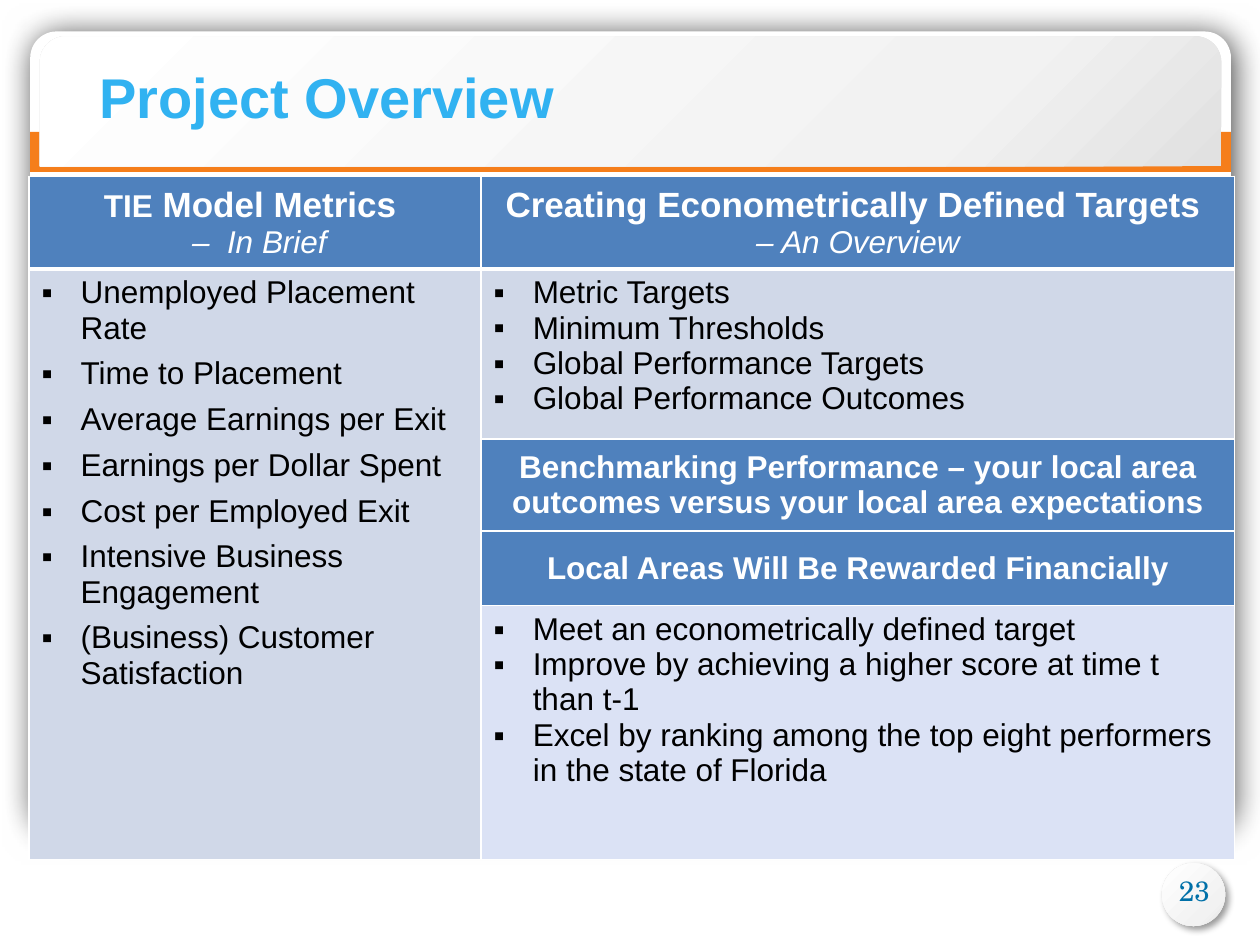
from collections import namedtuple

from lxml import etree
from pptx import Presentation
from pptx import util as u
from pptx.dml.color import RGBColor
from pptx.enum import shapes, text
from pptx.oxml import ns

WHITE = RGBColor(0xFF, 0xFF, 0xFF)
BLACK = RGBColor(0, 0, 0)
ORANGE = RGBColor(0xF5, 0x7E, 0x1B)
SKY = RGBColor(0x31, 0xB2, 0xF1)
NUMBER_BLUE = RGBColor(0, 0x70, 0xA8)
HEADER_BLUE = RGBColor(0x4F, 0x81, 0xBD)
PALE_BLUE = RGBColor(0xD0, 0xD8, 0xE8)
LIGHT_BLUE = RGBColor(0xDB, 0xE2, 0xF5)
SILVER = ((0, RGBColor(0xE1, 0xE1, 0xE1)), (24, RGBColor(0xF2, 0xF2, 0xF2)), (99, WHITE))

SHAPE = shapes.MSO_SHAPE
CENTER = text.PP_ALIGN.CENTER
MIDDLE = text.MSO_ANCHOR.MIDDLE
METRICS = ("Unemployed Placement Rate", "Time to Placement", "Average Earnings per Exit",
           "Earnings per Dollar Spent", "Cost per Employed Exit",
           "Intensive Business Engagement", "(Business) Customer Satisfaction")
TARGETS = ("Metric Targets", "Minimum Thresholds", "Global Performance Targets",
           "Global Performance Outcomes")
REWARDS = ("Meet an econometrically defined target",
           "Improve by achieving a higher score at time t than t-1",
           "Excel by ranking among the top eight performers in the state of Florida")

Run = namedtuple("Run", "words size bold italic", defaults=(18, False, False))


class Box(namedtuple("Box", "left top width height")):
    """A rectangle in inches."""

    def inner(self, left, top, width, height):
        """Return the inner box at the given shares of its size."""
        return Box(self.left + left * self.width, self.top + top * self.height,
                   width * self.width, height * self.height)

    def lengths(self):
        """Return the four sides as slide lengths."""
        return [u.Inches(side) for side in self]


def add_node(parent, tag, **attributes):
    """Append a DrawingML element and return it."""
    return etree.SubElement(parent, ns.qn(tag), {k: str(v) for k, v in attributes.items()})


def add_panel(slide, box, kind, fill, adjustments=(), shadow=None):
    """Draw a borderless panel with a plain or silver fill."""
    panel = slide.shapes.add_shape(kind, *box.lengths())
    for index, value in enumerate(adjustments):
        panel.adjustments[index] = value
    panel.line.fill.background()
    panel.shadow.inherit = False
    if fill is SILVER:
        panel.fill.gradient()
        gradient = panel.element.spPr.find(ns.qn("a:gradFill"))
        for child in list(gradient):
            gradient.remove(child)
        stops = add_node(gradient, "a:gsLst")
        for position, color in fill:
            stop = add_node(stops, "a:gs", pos=position * 1000)
            add_node(stop, "a:srgbClr", val=color)
        add_node(gradient, "a:lin", ang=225 * 60000, scaled=0)
    else:
        panel.fill.solid()
        panel.fill.fore_color.rgb = fill
    if shadow:
        opacity, blur = shadow
        effects = panel.element.spPr.find(ns.qn("a:effectLst"))
        outer = add_node(effects, "a:outerShdw", blurRad=u.Pt(blur), dist=u.Pt(3),
                         dir=45 * 60000, algn="tl", rotWithShape=0)
        color = add_node(outer, "a:srgbClr", val=BLACK)
        add_node(color, "a:alpha", val=opacity * 1000)


def add_run(paragraph, run, color, font="Arial"):
    """Add one formatted run."""
    piece = paragraph.add_run()
    piece.text = run.words
    piece.font.name = font
    piece.font.size = u.Pt(run.size)
    piece.font.bold, piece.font.italic = run.bold, run.italic
    piece.font.color.rgb = color


def add_label(slide, box, run, color, font="Arial"):
    """Add a one-line text box and return its frame."""
    frame = slide.shapes.add_textbox(*box.lengths()).text_frame
    frame.word_wrap = True
    add_run(frame.paragraphs[0], run, color, font)
    return frame


def draw_card(slide, box):
    """Draw the shadowed card with its orange band and silver header."""
    add_panel(slide, box, SHAPE.ROUNDED_RECTANGLE, WHITE, (0.033,), (72, 18))
    add_panel(slide, box.inner(0, 0.126, 1, 0.05), SHAPE.RECTANGLE, ORANGE)
    add_panel(slide, box.inner(0.008, 0.006, 0.984, 0.163),
              SHAPE.ROUND_2_SAME_RECTANGLE, SILVER, (0.2, 0))


def draw_title(slide, box):
    """Write the slide title."""
    frame = add_label(slide, box, Run("Project Overview", 32, True), SKY)
    frame.auto_size = text.MSO_AUTO_SIZE.SHAPE_TO_FIT_TEXT
    frame.paragraphs[0].line_spacing = 0.9


def draw_page_number(slide, box):
    """Draw the round badge with the page number."""
    add_panel(slide, box.inner(0.15, 0, 0.68, 1), SHAPE.ROUNDED_RECTANGLE, SILVER,
              (0.5,), (40, 4))
    frame = add_label(slide, box.inner(0, 0.16, 1, 0.66), Run("23", 16),
                      NUMBER_BLUE, "TeX Gyre Schola")
    frame.margin_top = 0
    frame.paragraphs[0].alignment = CENTER


def set_cell(cell, fill, bottom=1):
    """Give a cell white borders and a plain fill."""
    properties = cell._tc.get_or_add_tcPr()
    for tag, width in (("a:lnL", 1), ("a:lnR", 1), ("a:lnT", 1), ("a:lnB", bottom)):
        line = add_node(properties, tag, w=u.Pt(width))
        add_node(add_node(line, "a:solidFill"), "a:srgbClr", val=WHITE)
    cell.fill.solid()
    cell.fill.fore_color.rgb = fill


def next_paragraph(frame, index):
    """Return the first paragraph of a frame or a new one."""
    return frame.add_paragraph() if index else frame.paragraphs[0]


def write_heading(cell, *lines):
    """Write centred white lines, each a sequence of runs."""
    cell.vertical_anchor = MIDDLE
    for index, line in enumerate(lines):
        paragraph = next_paragraph(cell.text_frame, index)
        paragraph.alignment = CENTER
        for run in line:
            add_run(paragraph, run, WHITE)


def write_bullets(cell, items, space_after=0):
    """Write a list with square bullets."""
    for index, item in enumerate(items):
        paragraph = next_paragraph(cell.text_frame, index)
        properties = paragraph._p.get_or_add_pPr()
        properties.set("marL", str(u.Inches(0.31)))
        properties.set("indent", str(u.Inches(-0.31)))
        add_node(properties, "a:buFont", typeface="Arial")
        add_node(properties, "a:buChar", char="▪")
        paragraph.space_after = u.Pt(space_after)
        add_run(paragraph, Run(item), BLACK)


def draw_overview_table(slide, box):
    """Draw the metrics column beside the targets and rewards column."""
    column_shares = (0.375, 0.625)
    row_shares = (0.135, 0.249, 0.135, 0.109, 0.372)
    table = slide.shapes.add_table(5, 2, *box.lengths()).table
    for column, share in zip(table.columns, column_shares):
        column.width = u.Inches(box.width * share)
    for row, share in zip(table.rows, row_shares):
        row.height = u.Inches(box.height * share)
    right_fills = (HEADER_BLUE, PALE_BLUE, HEADER_BLUE, HEADER_BLUE, LIGHT_BLUE)
    for row, fill in enumerate(right_fills):
        bottom = 1 if row else 3
        set_cell(table.cell(row, 0), PALE_BLUE if row else HEADER_BLUE, bottom)
        set_cell(table.cell(row, 1), fill, bottom)
    table.cell(1, 0).merge(table.cell(4, 0))

    write_heading(table.cell(0, 0),
                  (Run("TIE", 18, True), Run(" Model Metrics ", 20, True)),
                  (Run(" ", 18, True), Run("–  In Brief", italic=True)))
    write_heading(table.cell(0, 1),
                  (Run("Creating Econometrically Defined Targets ", 20, True),),
                  (Run("– An Overview", italic=True),))
    write_bullets(table.cell(1, 0), METRICS, 6)
    write_bullets(table.cell(1, 1), TARGETS)
    write_heading(table.cell(2, 1), (Run("Benchmarking Performance – your local area "
                                         "outcomes versus your local area expectations",
                                         bold=True),))
    write_heading(table.cell(3, 1),
                  (Run("Local Areas Will Be Rewarded Financially", bold=True),))
    write_bullets(table.cell(4, 1), REWARDS)


def main():
    """Build the project overview slide."""
    deck = Presentation()
    page = Box(0, 0, 10, 7.5)
    deck.slide_width, deck.slide_height = page.lengths()[2:]
    slide = deck.slides.add_slide(deck.slide_layouts[6])
    draw_card(slide, Box(0.24, 0.25, 9.53, 6.33))
    draw_page_number(slide, Box(9.11, 6.85, 0.74, 0.5))
    draw_title(slide, Box(0.69, 0.51, 5.86, 0.59))
    draw_overview_table(slide, Box(0.23, 1.4, 9.57, 5.42))
    deck.save("out.pptx")


if __name__ == "__main__":
    main()
